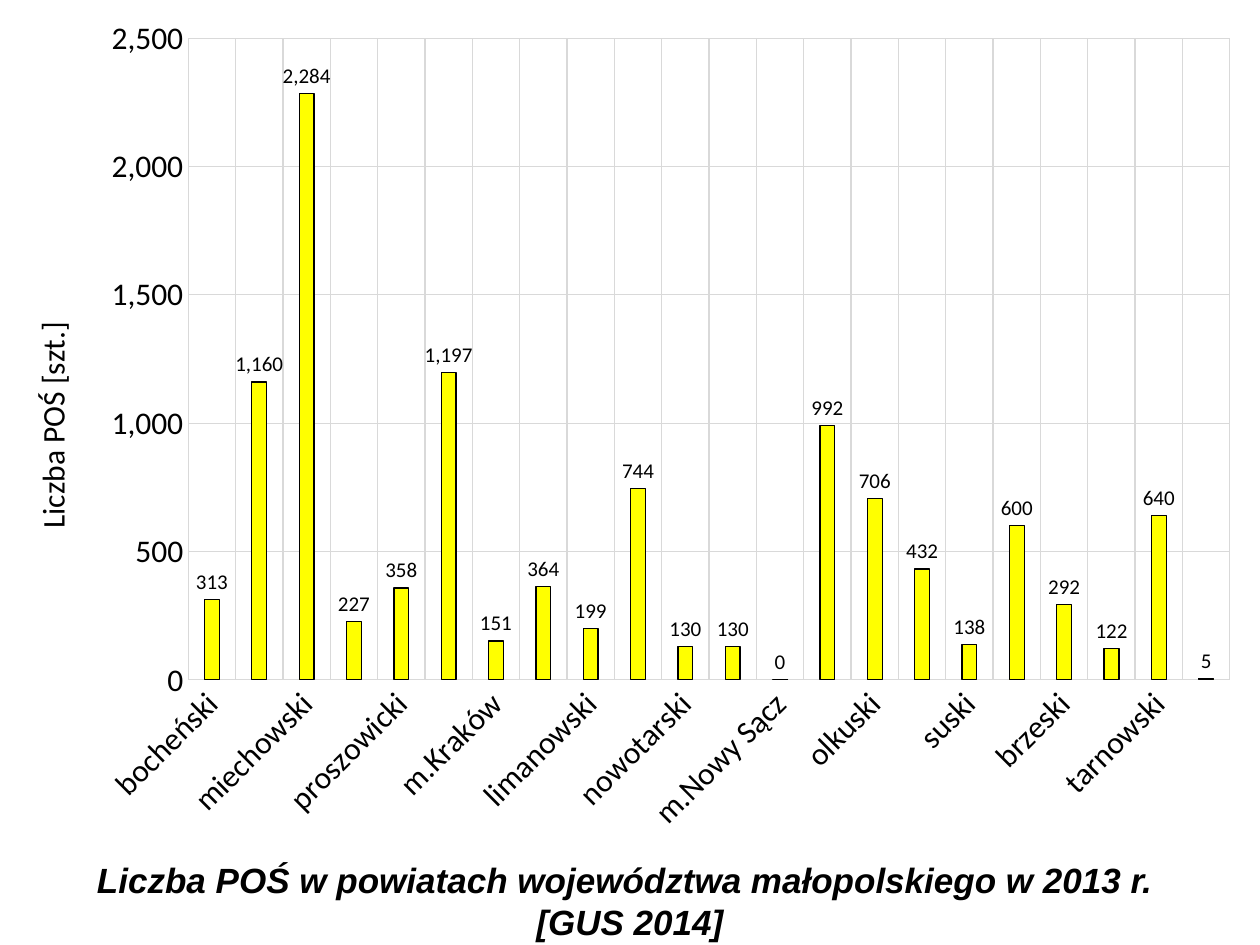
"""Build a slide with a column chart of POŚ counts by district and its caption."""
from dataclasses import dataclass

from lxml.etree import SubElement
from pptx import Presentation
from pptx.chart.data import CategoryChartData
from pptx.dml.color import RGBColor
from pptx.enum.chart import XL_CHART_TYPE, XL_LABEL_POSITION, XL_TICK_MARK
from pptx.enum.text import MSO_ANCHOR, PP_ALIGN
from pptx.oxml.ns import qn
from pptx.util import Cm, Pt


@dataclass(frozen=True)
class Theme:
    ink: RGBColor = RGBColor(0, 0, 0)
    grid: RGBColor = RGBColor(0xD9, 0xD9, 0xD9)
    bar: RGBColor = RGBColor(0xFF, 0xFF, 0)
    chart_font: str = "Calibri"
    caption_font: str = "Arial"
    axis_size: Pt = Pt(18)
    label_size: Pt = Pt(12)
    caption_size: Pt = Pt(20)
    line: Pt = Pt(0.75)


COUNTS = {
    "bocheński": 313, "krakowski": 1160, "miechowski": 2284, "myślenicki": 227,
    "proszowicki": 358, "wielicki": 1197, "m.Kraków": 151, "gorlicki": 364,
    "limanowski": 199, "nowosądecki": 744, "nowotarski": 130, "tatrzański": 130,
    "m.Nowy Sącz": 0, "chrzanowski": 992, "olkuski": 706, "oświęcimski": 432,
    "suski": 138, "wadowicki": 600, "brzeski": 292, "dąbrowski": 122,
    "tarnowski": 640, "m.Tarnów": 5,
}
PLOT = {"x": 0.15, "y": 0.04, "w": 0.83, "h": 0.75}
NUMBER_FORMAT = "#,##0"


def apply(obj, values):
    for name, value in values.items():
        setattr(obj, name, value)


class SlideBuilder:
    def __init__(self, slide, theme):
        self.slide, self.theme = slide, theme

    def font(self, font, size, name, **extra):
        apply(font, {"size": size, "name": name, "bold": False, **extra})
        font.color.rgb = self.theme.ink

    def line(self, line, color):
        line.color.rgb = color
        line.width = self.theme.line

    def axis(self, axis):
        t = self.theme
        apply(axis, {"has_major_gridlines": True,
                     "major_tick_mark": XL_TICK_MARK.NONE,
                     "minor_tick_mark": XL_TICK_MARK.NONE})
        self.line(axis.major_gridlines.format.line, t.grid)
        self.line(axis.format.line, t.grid)
        self.font(axis.tick_labels.font, t.axis_size, t.chart_font)

    def plot_layout(self, chart, box):
        area = chart._chartSpace.chart.plotArea
        for old in area.findall(qn("c:layout")):
            area.remove(old)
        layout = SubElement(area, qn("c:layout"))
        area.insert(0, layout)
        manual = SubElement(layout, qn("c:manualLayout"))
        settings = {"layoutTarget": "inner", "xMode": "edge", "yMode": "edge", **box}
        for tag, value in settings.items():
            SubElement(manual, qn(f"c:{tag}")).set("val", str(value))

    def column_chart(self, counts, axis_title, left, top, width, height):
        t = self.theme
        data = CategoryChartData(number_format=NUMBER_FORMAT)
        data.categories = list(counts)
        data.add_series("Series 1", list(counts.values()))
        chart = self.slide.shapes.add_chart(
            XL_CHART_TYPE.COLUMN_CLUSTERED, left, top, width, height, data).chart
        apply(chart, {"has_legend": False, "has_title": False})
        self.font(chart.font, t.axis_size, t.chart_font)
        self.plot_layout(chart, PLOT)

        cat, val = chart.category_axis, chart.value_axis
        for axis in (cat, val):
            self.axis(axis)
        cat._element.txPr.find(qn("a:bodyPr")).set("rot", "-2700000")
        val.format.line.fill.background()
        apply(val, {"minimum_scale": 0, "maximum_scale": 2500, "major_unit": 500})
        apply(val.tick_labels, {"number_format": NUMBER_FORMAT,
                                "number_format_is_linked": False})
        tf = val.axis_title.text_frame
        tf.text = axis_title
        self.font(tf.paragraphs[0].runs[0].font, t.axis_size, t.chart_font)

        plot = chart.plots[0]
        apply(plot, {"gap_width": 219, "overlap": -27,
                     "vary_by_categories": False, "has_data_labels": True})
        apply(plot.data_labels, {"show_value": True,
                                 "number_format": NUMBER_FORMAT,
                                 "number_format_is_linked": False,
                                 "position": XL_LABEL_POSITION.OUTSIDE_END})
        self.font(plot.data_labels.font, t.label_size, t.chart_font)
        bars = plot.series[0]
        bars.format.fill.solid()
        bars.format.fill.fore_color.rgb = t.bar
        self.line(bars.format.line, t.ink)

    def caption(self, text, left, top, width, height):
        t = self.theme
        tf = self.slide.shapes.add_textbox(left, top, width, height).text_frame
        apply(tf, {"word_wrap": True, "vertical_anchor": MSO_ANCHOR.MIDDLE})
        p = tf.paragraphs[0]
        apply(p, {"text": text, "alignment": PP_ALIGN.CENTER})
        for r in p.runs:
            self.font(r.font, t.caption_size, t.caption_font, bold=True, italic=True)


def main():
    prs = Presentation()
    apply(prs, {"slide_width": Cm(25.4), "slide_height": Cm(19.05)})
    builder = SlideBuilder(prs.slides.add_slide(prs.slide_layouts[6]), Theme())
    builder.column_chart(COUNTS, "Liczba POŚ [szt.]",
                         Cm(0), Cm(0.08), Cm(25.3), Cm(17.25))
    builder.caption("Liczba POŚ w powiatach województwa małopolskiego w 2013 r. \v[GUS 2014]",
                    Cm(0.5), Cm(17.15), Cm(24.4), Cm(2))
    prs.save("out.pptx")


if __name__ == "__main__":
    main()
